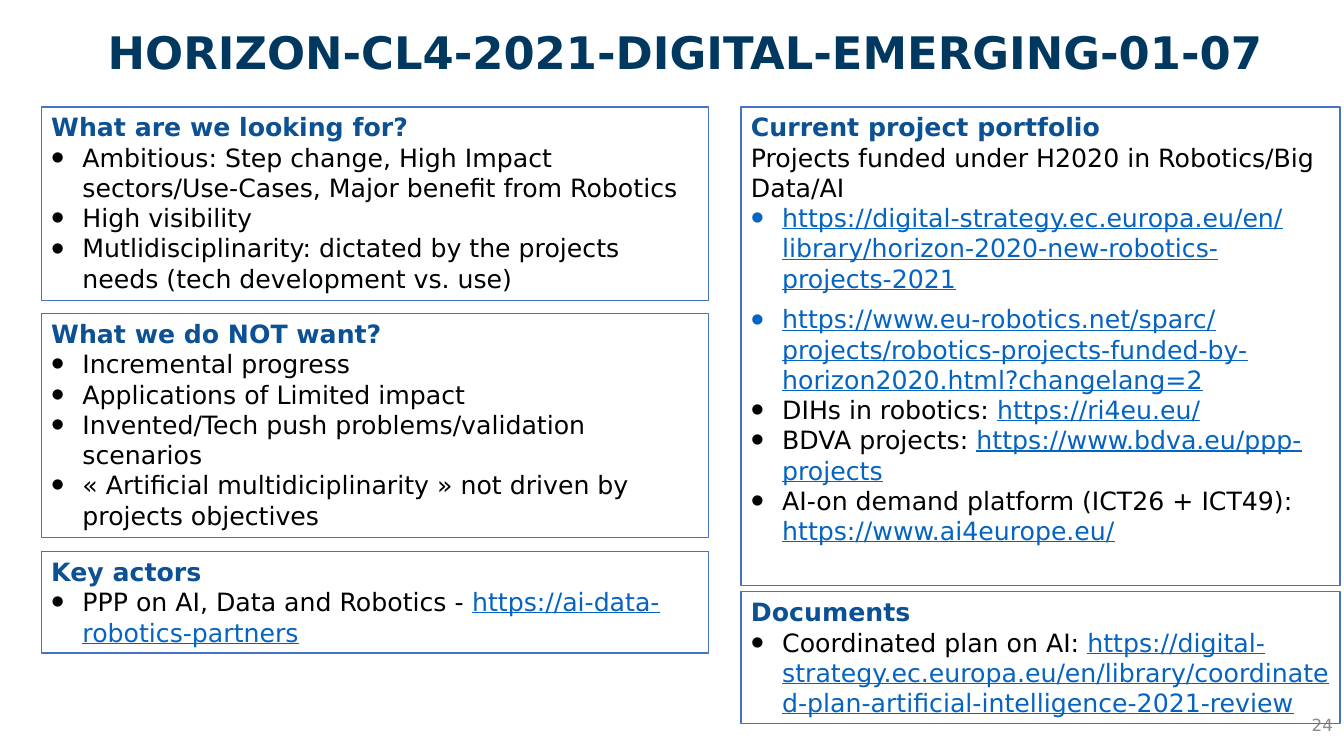
from dataclasses import dataclass

from lxml import etree
from pptx import Presentation
from pptx.dml.color import RGBColor
from pptx.enum import shapes, text
from pptx.oxml import ns
from pptx.util import Inches, Pt


@dataclass(frozen=True)
class Theme:
    font: str = "DejaVu Sans"
    title_color: str = "003860"
    heading_color: str = "0C5193"
    body_color: str = "000000"
    link_color: str = "0563C1"
    border_color: str = "4472C4"
    number_color: str = "8C8C8C"
    title_size: int = 32
    body_size: int = 18
    number_size: int = 12


class SlideBuilder:
    def __init__(self, slide, theme):
        self.slide = slide
        self.theme = theme

    def style(self, run, size, color, bold=False, underline=False):
        font = run.font
        font.name = self.theme.font
        font.size = Pt(size)
        font.bold = bold
        font.underline = underline
        font.color.rgb = RGBColor.from_string(color)

    def label(self, content, left, top, width, height, size, color,
              bold=False, alignment=text.PP_ALIGN.LEFT,
              anchor=text.MSO_ANCHOR.TOP):
        box = self.slide.shapes.add_textbox(
            Inches(left), Inches(top), Inches(width), Inches(height))
        frame = box.text_frame
        frame.word_wrap = True
        frame.vertical_anchor = anchor
        frame.text = content
        paragraph = frame.paragraphs[0]
        paragraph.alignment = alignment
        self.style(paragraph.runs[0], size, color, bold)

    def bullet(self, paragraph):
        properties = paragraph._p.get_or_add_pPr()
        properties.set("marL", str(Inches(0.31)))
        properties.set("indent", str(-Inches(0.31)))
        for tag, name, value in (("a:buSzPct", "val", "150000"),
                                 ("a:buFont", "typeface", "Arial"),
                                 ("a:buChar", "char", "•")):
            etree.SubElement(properties, ns.qn(tag)).set(name, value)

    def body_runs(self, paragraph, content):
        """Add the text, with any web address at its end styled as a link."""
        theme = self.theme
        lead, scheme, address = content.partition("https://")
        for part, color in ((lead, theme.body_color),
                            (scheme + address, theme.link_color)):
            if part:
                run = paragraph.add_run()
                run.text = part
                self.style(run, theme.body_size, color,
                           underline=color == theme.link_color)

    def panel(self, left, top, width, height, heading, bullets, intro=None):
        theme = self.theme
        box = self.slide.shapes.add_shape(
            shapes.MSO_SHAPE.RECTANGLE,
            Inches(left), Inches(top), Inches(width), Inches(height))
        box.shadow.inherit = False
        box.fill.background()
        box.line.color.rgb = RGBColor.from_string(theme.border_color)
        box.line.width = Pt(1)
        frame = box.text_frame
        frame.word_wrap = True
        frame.vertical_anchor = text.MSO_ANCHOR.TOP
        frame.text = heading
        frame.paragraphs[0].alignment = text.PP_ALIGN.LEFT
        self.style(frame.paragraphs[0].runs[0], theme.body_size,
                   theme.heading_color, bold=True)
        if intro:
            paragraph = frame.add_paragraph()
            paragraph.alignment = text.PP_ALIGN.LEFT
            self.body_runs(paragraph, intro)
        previous = ""
        for content in bullets:
            paragraph = frame.add_paragraph()
            self.bullet(paragraph)
            paragraph.alignment = text.PP_ALIGN.LEFT
            if previous.startswith("https://") and content.startswith("https://"):
                paragraph.space_before = Pt(7.5)
            self.body_runs(paragraph, content)
            previous = content


LEFT_COLUMN = (0.41, 6.62, [
    (1.06, 1.92, "What are we looking for?", [
        "Ambitious: Step change, High Impact sectors/Use-Cases, "
        "Major benefit from Robotics",
        "High visibility",
        "Mutlidisciplinarity: dictated by the projects needs "
        "(tech development vs. use)",
    ]),
    (3.11, 2.22, "What we do NOT want?", [
        "Incremental progress",
        "Applications of Limited impact",
        "Invented/Tech push problems/validation scenarios",
        "« Artificial multidiciplinarity » not driven by projects objectives",
    ]),
    (5.47, 1.01, "Key actors", [
        "PPP on AI, Data and Robotics - https://ai-data-robotics-partners",
    ]),
])
RIGHT_COLUMN = (7.35, 5.94, [
    (1.06, 4.75, "Current project portfolio", [
        "https://digital-strategy.ec.europa.eu/en/library/"
        "horizon-2020-new-robotics-projects-2021",
        "https://www.eu-robotics.net/sparc/projects/"
        "robotics-projects-funded-by-horizon2020.html?changelang=2",
        "DIHs in robotics: https://ri4eu.eu/",
        "BDVA projects: https://www.bdva.eu/ppp-projects",
        "AI-on demand platform (ICT26 + ICT49): https://www.ai4europe.eu/",
    ], "Projects funded under H2020 in Robotics/Big Data/AI"),
    (5.87, 1.31, "Documents", [
        "Coordinated plan on AI: https://digital-strategy.ec.europa.eu/en/"
        "library/coordinated-plan-artificial-intelligence-2021-review",
    ]),
])


def main():
    presentation = Presentation()
    presentation.slide_width = Inches(13.33)
    presentation.slide_height = Inches(7.5)
    slide = presentation.slides.add_slide(presentation.slide_layouts[6])
    theme = Theme()
    builder = SlideBuilder(slide, theme)
    builder.label("24", 10.32, 6.99, 3, 0.4, theme.number_size,
                  theme.number_color, alignment=text.PP_ALIGN.RIGHT,
                  anchor=text.MSO_ANCHOR.MIDDLE)
    builder.label("HORIZON-CL4-2021-DIGITAL-EMERGING-01-07",
                  0.97, 0.2, 12.32, 0.64, theme.title_size,
                  theme.title_color, bold=True)
    for left, width, panels in (LEFT_COLUMN, RIGHT_COLUMN):
        for top, height, *content in panels:
            builder.panel(left, top, width, height, *content)
    presentation.save("out.pptx")


if __name__ == "__main__":
    main()
